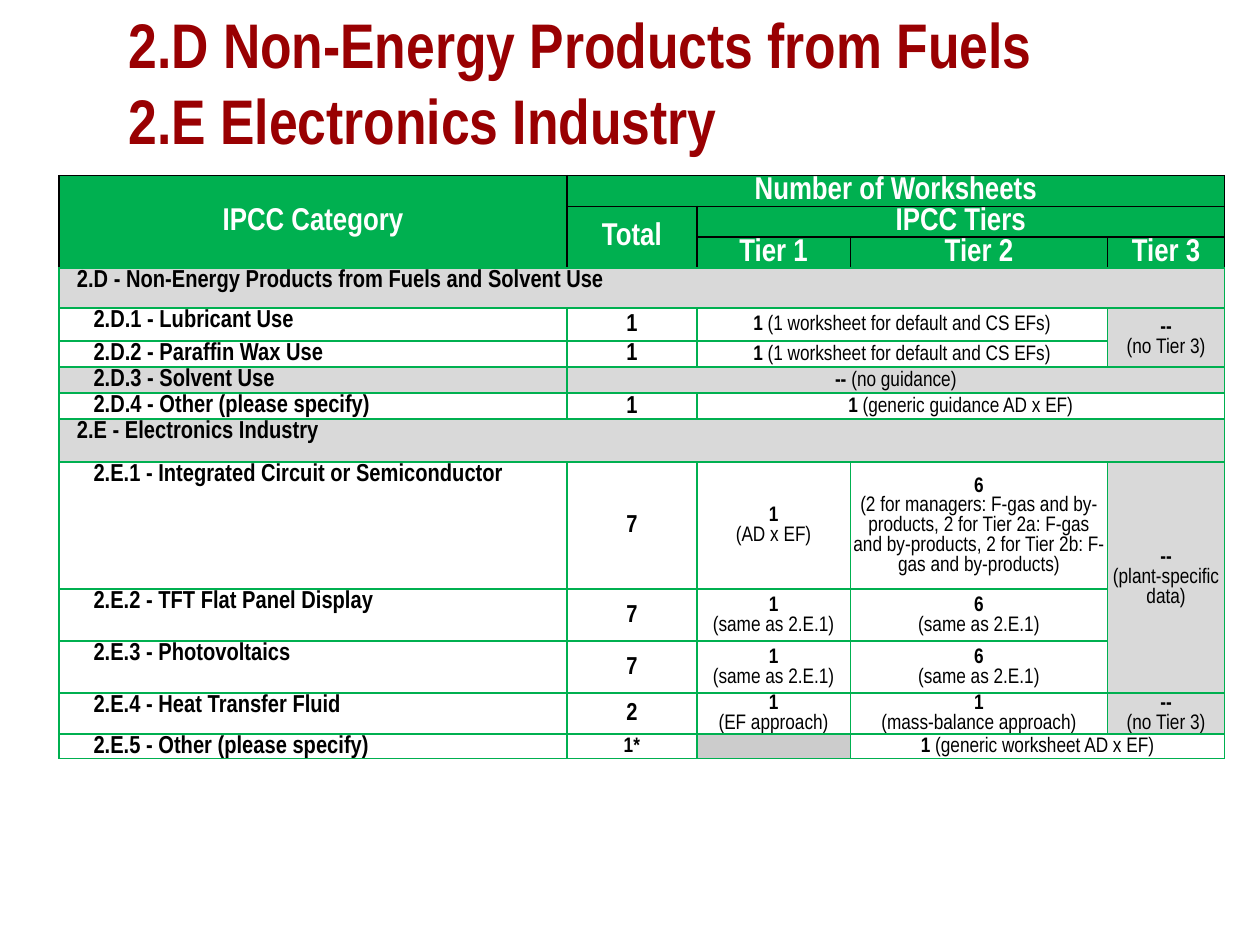
from lxml.etree import SubElement
from pptx import Presentation
from pptx.dml.color import RGBColor
from pptx.enum.text import MSO_ANCHOR, PP_ALIGN
from pptx.oxml.ns import qn
from pptx.util import Pt

FONT = "Arial Narrow"
RED = RGBColor(0x99, 0x00, 0x02)
GREEN = RGBColor(0x00, 0xB0, 0x50)
BLACK = RGBColor(0, 0, 0)
WHITE = RGBColor(0xFF, 0xFF, 0xFF)
GREY = RGBColor(0xD9, 0xD9, 0xD9)
DARK_GREY = RGBColor(0xCC, 0xCC, 0xCC)

HEADER_ROWS = 3
COL_WIDTHS = [290.2, 74.2, 87.8, 146.9, 67]
ROW_HEIGHTS = [17.6, 17.6, 17.6, 22.8, 18.9, 14.9, 14.9, 14.9, 24.6, 72.6, 29.7, 29.7, 23.4, 14]

HEADERS = {
    (0, 0): "IPCC Category",
    (0, 1): "Number of Worksheets",
    (1, 1): "Total",
    (1, 2): "IPCC Tiers",
    (2, 2): "Tier 1",
    (2, 3): "Tier 2",
    (2, 4): "Tier 3",
}
CATEGORIES = [
    "2.D - Non-Energy Products from Fuels and Solvent Use",
    "2.D.1 - Lubricant Use",
    "2.D.2 - Paraffin Wax Use",
    "2.D.3 - Solvent Use",
    "2.D.4 - Other (please specify)",
    "2.E - Electronics Industry",
    "2.E.1 - Integrated Circuit or Semiconductor",
    "2.E.2 - TFT Flat Panel Display",
    "2.E.3 - Photovoltaics",
    "2.E.4 - Heat Transfer Fluid",
    "2.E.5 - Other (please specify)",
]
TOTALS = {4: "1", 5: "1", 7: "1", 9: "7", 10: "7", 11: "7", 12: "2", 13: "1*"}
SHARED_EFS = ["1 |(1 worksheet for default and CS EFs)"]
NO_TIER_3 = ["--", "|(no Tier 3)"]
SAME_AS_E1 = "|(same as 2.E.1)"
TIERS = {
    (4, 2): SHARED_EFS,
    (4, 4): NO_TIER_3,
    (5, 2): SHARED_EFS,
    (6, 1): ["-- |(no guidance)"],
    (7, 2): ["1 |(generic guidance AD x EF)"],
    (9, 2): ["1", "|(AD x EF)"],
    (9, 3): ["6", "|(2 for managers: F-gas and by-products, 2 for Tier 2a: F-gas "
                  "and by-products, 2 for Tier 2b: F-gas and by-products)"],
    (9, 4): ["--", "|(plant-specific data)"],
    (10, 2): ["1", SAME_AS_E1],
    (10, 3): ["6", SAME_AS_E1],
    (11, 2): ["1", SAME_AS_E1],
    (11, 3): ["6", SAME_AS_E1],
    (12, 2): ["1", "|(EF approach)"],
    (12, 3): ["1", "|(mass-balance approach)"],
    (12, 4): NO_TIER_3,
    (13, 3): ["1 |(generic worksheet AD x EF)"],
}
MERGES = [
    (0, 0, 2, 0), (0, 1, 0, 4), (1, 1, 2, 1), (1, 2, 1, 4), (3, 0, 3, 4),
    (4, 2, 4, 3), (4, 4, 5, 4), (5, 2, 5, 3), (6, 1, 6, 4), (7, 2, 7, 4),
    (8, 0, 8, 4), (9, 4, 11, 4), (13, 3, 13, 4),
]
GREY_CELLS = {(4, 4), (5, 4), (9, 4), (10, 4), (11, 4), (12, 4)}
GREY_ROWS = {3, 6, 8}


def style_run(r, size, color, bold=True):
    """Set the font of a run."""
    r.font.name = FONT
    r.font.size = Pt(size)
    r.font.bold = bold
    r.font.color.rgb = color


def add_title(s):
    """Place and format the two-line title."""
    title = s.shapes.title
    title.left, title.top, title.width, title.height = Pt(66.2), Pt(17), Pt(587.5), Pt(58.8)
    tf = title.text_frame
    tf.text = "2.D Non-Energy Products from Fuels\v2.E Electronics Industry"
    tf.word_wrap = True
    tf.vertical_anchor = MSO_ANCHOR.MIDDLE
    p = tf.paragraphs[0]
    p.alignment = PP_ALIGN.LEFT
    for r in p.runs:
        style_run(r, 36, RED)


def set_borders(cell, color):
    """Draw a one-point line on all four sides of a cell."""
    tc_pr = cell._tc.get_or_add_tcPr()
    for side in ("lnL", "lnR", "lnT", "lnB"):
        ln = SubElement(tc_pr, qn(f"a:{side}"), w=str(Pt(1)))
        fill = SubElement(ln, qn("a:solidFill"))
        SubElement(fill, qn("a:srgbClr"), val=str(color))


def set_empty_size(p, size):
    """Give an empty paragraph the font size of its row."""
    end = SubElement(p._p, qn("a:endParaRPr"), sz=str(size * 100))
    SubElement(end, qn("a:latin"), typeface=FONT)


def fill_cell(cell, lines, size, fill, color, line_color, level=0):
    """Format a cell; in each line the part before the bar is bold."""
    set_borders(cell, line_color)
    cell.fill.solid()
    cell.fill.fore_color.rgb = fill
    cell.margin_left = cell.margin_right = cell.margin_top = Pt(0.7)
    cell.margin_bottom = Pt(0)
    cell.vertical_anchor = MSO_ANCHOR.TOP if level else MSO_ANCHOR.MIDDLE
    tf = cell.text_frame
    for i, line in enumerate(lines):
        p = tf.add_paragraph() if i else tf.paragraphs[0]
        p.alignment = PP_ALIGN.LEFT if level else PP_ALIGN.CENTER
        if level:
            p._p.get_or_add_pPr().set("marL", str(Pt(9.5 * level)))
        if not line:
            set_empty_size(p, size)
        head, _, detail = line.partition("|")
        for text, bold in ((head, True), (detail, False)):
            if text:
                r = p.add_run()
                r.text = text
                style_run(r, size, color, bold)


def body_fill(row, col):
    """Return the background of a body cell."""
    if (row, col) == (13, 2):
        return DARK_GREY
    return GREY if row in GREY_ROWS or (row, col) in GREY_CELLS else WHITE


def add_worksheet_table(s):
    """Build the table of worksheets by category and tier."""
    rows, cols = len(ROW_HEIGHTS), len(COL_WIDTHS)
    table = s.shapes.add_table(rows, cols, Pt(33.8), Pt(100.3),
                               Pt(sum(COL_WIDTHS)), Pt(sum(ROW_HEIGHTS))).table
    for column, width in zip(table.columns, COL_WIDTHS):
        column.width = Pt(width)
    for row, height in zip(table.rows, ROW_HEIGHTS):
        row.height = Pt(height)
    for i in range(rows):
        for j in range(cols):
            cell = table.cell(i, j)
            if i < HEADER_ROWS:
                fill_cell(cell, [HEADERS.get((i, j), "")], 18, GREEN, WHITE, BLACK)
            elif j == 0:
                category = CATEGORIES[i - HEADER_ROWS]
                level = category.split(" ")[0].count(".")
                fill_cell(cell, [category], 14, body_fill(i, j), BLACK, GREEN, level)
            elif j == 1 and i in TOTALS:
                size = 12 if "*" in TOTALS[i] else 14
                fill_cell(cell, [TOTALS[i]], size, body_fill(i, j), BLACK, GREEN)
            else:
                fill_cell(cell, TIERS.get((i, j), [""]), 12, body_fill(i, j), BLACK, GREEN)
    for top, left, bottom, right in MERGES:
        table.cell(top, left).merge(table.cell(bottom, right))


def main():
    """Build the slide and save it."""
    prs = Presentation()
    prs.slide_width, prs.slide_height = Pt(720), Pt(540)
    s = prs.slides.add_slide(prs.slide_layouts[5])
    add_title(s)
    add_worksheet_table(s)
    prs.save("out.pptx")


if __name__ == "__main__":
    main()
